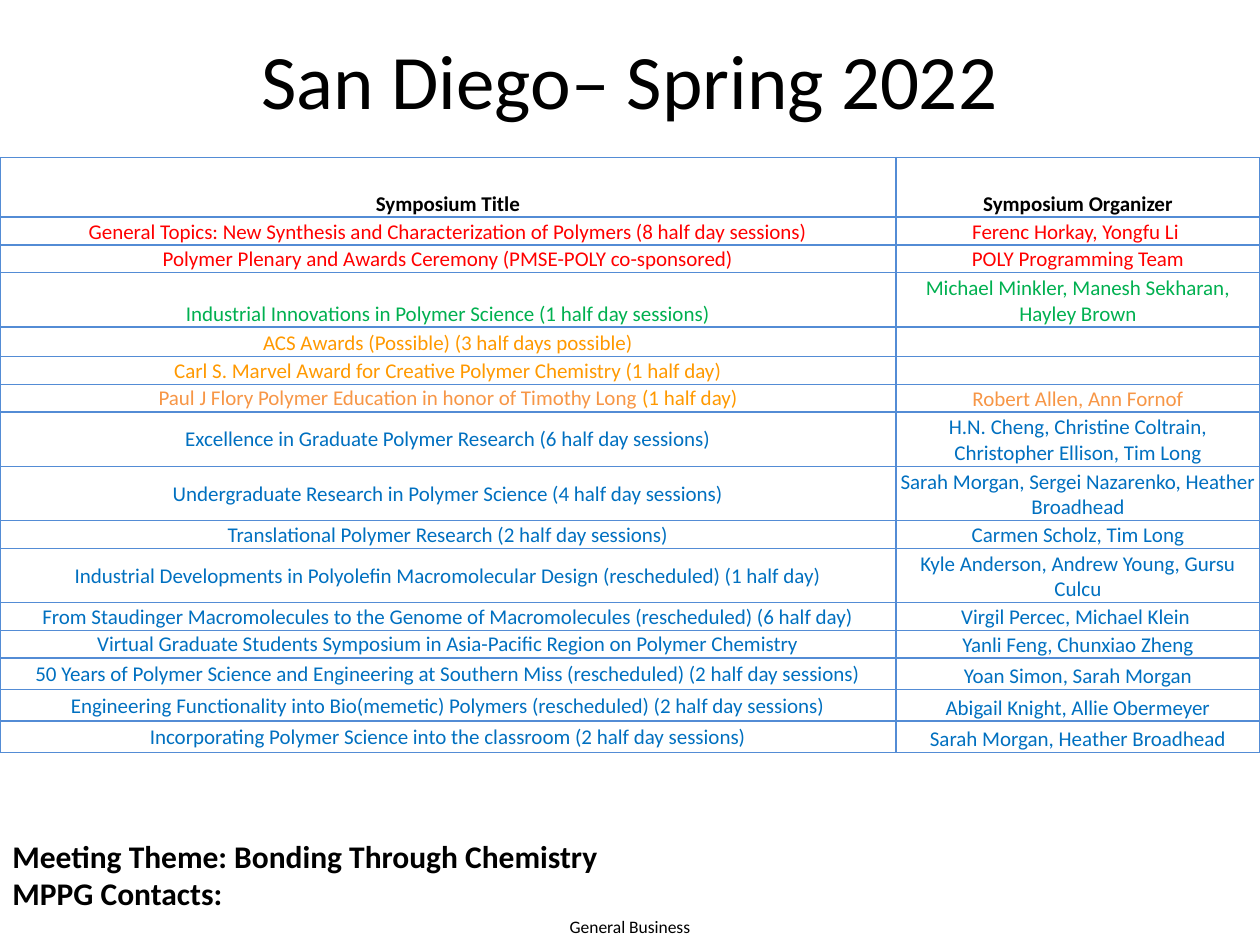
from dataclasses import dataclass

from lxml.etree import SubElement
from pptx import Presentation
from pptx.dml.color import RGBColor
from pptx.enum.text import MSO_ANCHOR as Anchor, PP_ALIGN as Align
from pptx.oxml.ns import qn
from pptx.util import Pt

COLORS = {
    "black": "000000",
    "white": "FFFFFF",
    "red": "FF0000",
    "green": "00B050",
    "amber": "FF9900",
    "orange": "F79646",
    "blue": "0070C0",
    "border": "538CD5",
}
FONT = "Calibri"
COL_WIDTHS = (512, 208)
CELL_SIZE = 12
SINGLE, DOUBLE = 15.9, 31


@dataclass(frozen=True)
class Symposium:
    title: str
    organizer: str
    color: str = "blue"
    height: float = SINGLE
    anchor: Anchor = Anchor.MIDDLE
    bold: bool = False
    suffix: str = ""


@dataclass(frozen=True)
class Label:
    lines: tuple[str, ...]
    box: tuple[float, float, float, float]
    size: float
    insets: tuple[float, float]
    align: Align = Align.CENTER
    anchor: Anchor = Anchor.MIDDLE
    bold: bool = False


SYMPOSIA = [
    Symposium("Symposium Title", "Symposium Organizer", "black", 34, Anchor.BOTTOM, True),
    Symposium("General Topics: New Synthesis and Characterization of Polymers (8 half day sessions)",
              "Ferenc Horkay, Yongfu Li ", "red", anchor=Anchor.BOTTOM),
    Symposium("Polymer Plenary and Awards Ceremony (PMSE-POLY co-sponsored)",
              "POLY Programming Team", "red", anchor=Anchor.BOTTOM),
    Symposium("Industrial Innovations in Polymer Science (1 half day sessions)",
              "Michael Minkler, Manesh Sekharan, Hayley Brown", "green", DOUBLE, Anchor.BOTTOM),
    Symposium("ACS Awards (Possible) (3 half days possible)", "", "amber", 17, Anchor.BOTTOM),
    Symposium("Carl S. Marvel Award for Creative Polymer Chemistry (1 half day)", "", "amber"),
    Symposium("Paul J Flory Polymer Education in honor of Timothy Long ",
              "Robert Allen, Ann Fornof", "orange", suffix="(1 half day)"),
    Symposium("Excellence in Graduate Polymer Research (6 half day sessions)",
              "H.N. Cheng, Christine Coltrain, Christopher Ellison, Tim Long", height=DOUBLE),
    Symposium("Undergraduate Research in Polymer Science (4 half day sessions)",
              "Sarah Morgan, Sergei Nazarenko, Heather Broadhead", height=DOUBLE),
    Symposium("Translational Polymer Research (2 half day sessions)", "Carmen Scholz, Tim Long"),
    Symposium("Industrial Developments in Polyolefin Macromolecular Design (rescheduled) (1 half day)",
              "Kyle Anderson, Andrew Young, Gursu Culcu", height=DOUBLE),
    Symposium("From Staudinger Macromolecules to the Genome of Macromolecules (rescheduled) (6 half day)",
              "Virgil Percec, Michael Klein "),
    Symposium("Virtual Graduate Students Symposium in Asia-Pacific Region on Polymer Chemistry",
              "Yanli Feng, Chunxiao Zheng"),
    Symposium("50 Years of Polymer Science and Engineering at Southern Miss (rescheduled) (2 half day sessions)",
              "Yoan Simon, Sarah Morgan", height=18),
    Symposium("Engineering Functionality into Bio(memetic) Polymers (rescheduled) (2 half day sessions)",
              "Abigail Knight, Allie Obermeyer", height=18),
    Symposium("Incorporating Polymer Science into the classroom (2 half day sessions)",
              "Sarah Morgan, Heather Broadhead", height=18),
]

LABELS = [
    Label(("General Business",), (314, 519, 92, 21), 10, (0, 0)),
    Label(("San Diego– Spring 2022",), (36, 0, 648, 90), 44, (7.2, 3.6)),
    Label(("Meeting Theme: Bonding Through Chemistry", "MPPG Contacts:"),
          (0, 474.5, 711, 51), 18, (7.2, 3.6), Align.LEFT, Anchor.TOP, True),
]


def set_attrs(target: object, values: dict) -> None:
    for name, value in values.items():
        setattr(target, name, value)


def add_run(p, text: str, size: float, color: str, bold: bool) -> None:
    r = p.add_run()
    r.text = text
    set_attrs(r.font, {"name": FONT, "size": Pt(size), "bold": bold})
    r.font.color.rgb = RGBColor.from_string(COLORS[color])


def add_label(s, label: Label) -> None:
    tf = s.shapes.add_textbox(*map(Pt, label.box)).text_frame
    side, top = map(Pt, label.insets)
    set_attrs(tf, {"word_wrap": True, "vertical_anchor": label.anchor,
                   "margin_left": side, "margin_right": side,
                   "margin_top": top, "margin_bottom": top})
    for i, line in enumerate(label.lines):
        p = tf.add_paragraph() if i else tf.paragraphs[0]
        p.alignment = label.align
        add_run(p, line, label.size, "black", label.bold)


def style_cell(cell, anchor: Anchor) -> None:
    set_attrs(cell, {"vertical_anchor": anchor, "margin_left": Pt(0.7),
                     "margin_right": Pt(0.7), "margin_top": Pt(0.7), "margin_bottom": Pt(0)})
    tc_pr = cell._tc.get_or_add_tcPr()
    for edge in ("lnL", "lnR", "lnT", "lnB"):
        ln = SubElement(tc_pr, qn(f"a:{edge}"), w=str(Pt(1)))
        SubElement(SubElement(ln, qn("a:solidFill")), qn("a:srgbClr"), val=COLORS["border"])
    cell.fill.solid()
    cell.fill.fore_color.rgb = RGBColor.from_string(COLORS["white"])


def fill_cell(cell, runs: list[tuple[str, str]], anchor: Anchor, bold: bool) -> None:
    style_cell(cell, anchor)
    p = cell.text_frame.paragraphs[0]
    p.alignment = Align.CENTER
    for text, color in runs:
        if text:
            add_run(p, text, CELL_SIZE, color, bold)
    if not p.runs:
        SubElement(p._p, qn("a:endParaRPr"), sz=str(CELL_SIZE * 100))


def add_symposium_table(s, symposia: list[Symposium]) -> None:
    height = sum(item.height for item in symposia)
    table = s.shapes.add_table(len(symposia), len(COL_WIDTHS), Pt(0), Pt(90),
                               Pt(sum(COL_WIDTHS)), Pt(height)).table
    set_attrs(table, {"first_row": False, "horz_banding": False})
    for col, width in zip(table.columns, COL_WIDTHS):
        col.width = Pt(width)
    for row, item in zip(table.rows, symposia):
        row.height = Pt(item.height)
        title, organizer = row.cells
        fill_cell(title, [(item.title, item.color), (item.suffix, "amber")], item.anchor, item.bold)
        fill_cell(organizer, [(item.organizer, item.color)], Anchor.BOTTOM, item.bold)


def main() -> None:
    prs = Presentation()
    set_attrs(prs, {"slide_width": Pt(720), "slide_height": Pt(540)})
    s = prs.slides.add_slide(prs.slide_layouts[6])
    add_symposium_table(s, SYMPOSIA)
    for label in LABELS:
        add_label(s, label)
    prs.save("out.pptx")


if __name__ == "__main__":
    main()
